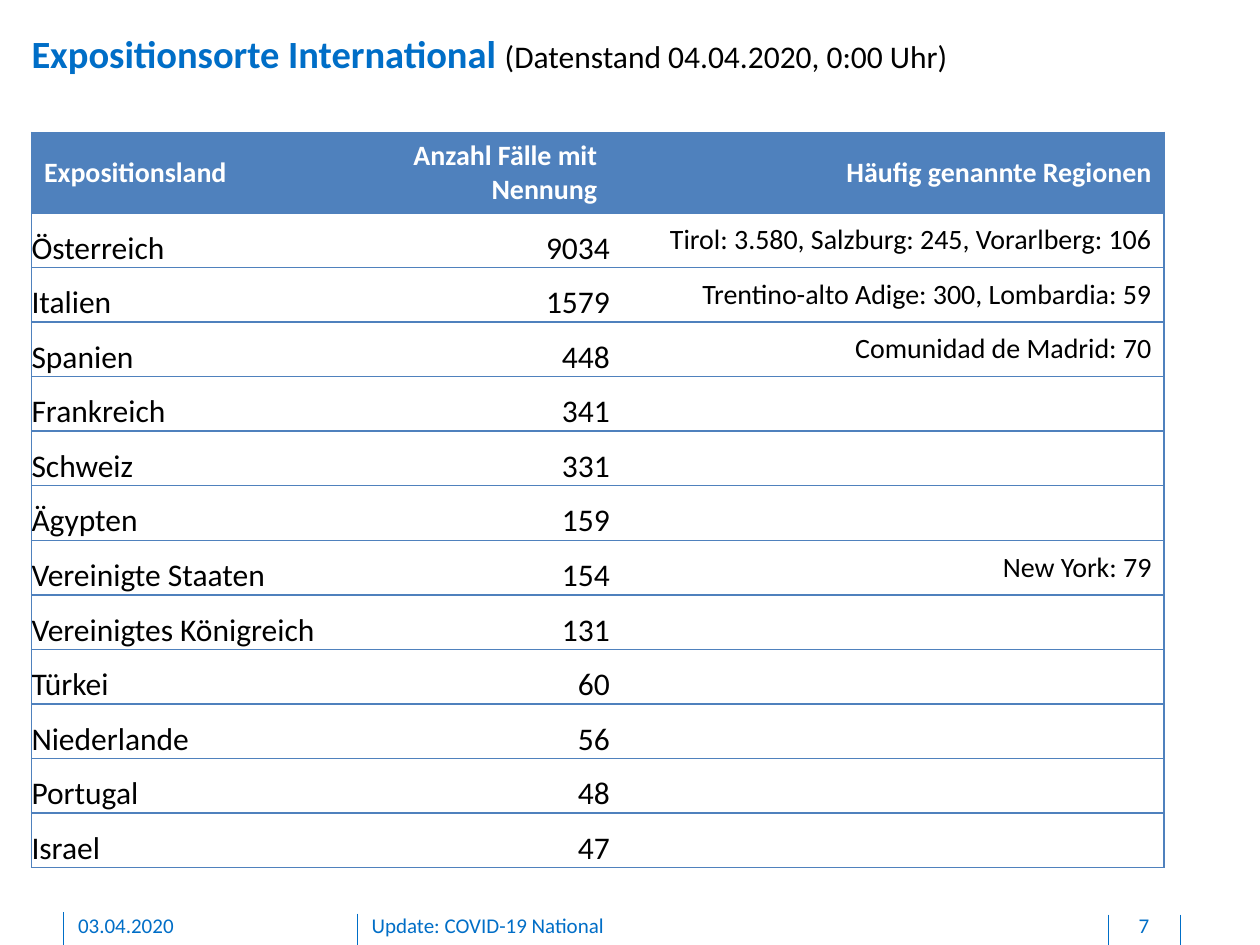
from pptx import Presentation as Deck
from pptx.dml.color import RGBColor as RGB
from pptx.enum.shapes import MSO_CONNECTOR as Link
from pptx.enum.text import MSO_ANCHOR as Anchor, PP_ALIGN as Align
from pptx.oxml import parse_xml
from pptx.oxml.ns import nsdecls
from pptx.util import Emu, Inches, Pt

COLS, ROWS = 40, 30
UNIT = Inches(0.25)
INK = {"blue": "006EC7", "head": "4F81BD", "text": "000000", "white": "FFFFFF"}
FLUSH = {"margin_left": 0, "margin_right": 0, "margin_top": 0, "margin_bottom": 0}
FOOT = {**FLUSH, "margin_bottom": Inches(0.05), "word_wrap": True,
        "vertical_anchor": Anchor.TOP}
BASE = {"vertical_anchor": Anchor.BOTTOM, **FLUSH}
MID = {"vertical_anchor": Anchor.MIDDLE}

HEADS = ["Expositionsland", "Anzahl Fälle mit Nennung", "Häufig genannte Regionen"]
LANDS = [
    ("Österreich", 9034, "Tirol: 3.580, Salzburg: 245, Vorarlberg: 106"),
    ("Italien", 1579, "Trentino-alto Adige: 300, Lombardia: 59"),
    ("Spanien", 448, "Comunidad de Madrid: 70"),
    ("Frankreich", 341, ""),
    ("Schweiz", 331, ""),
    ("Ägypten", 159, ""),
    ("Vereinigte Staaten", 154, "New York: 79"),
    ("Vereinigtes Königreich", 131, ""),
    ("Türkei", 60, ""),
    ("Niederlande", 56, ""),
    ("Portugal", 48, ""),
    ("Israel", 47, ""),
]
WIDTHS = [9.96, 8.4, 17.6]
HEAD_ROW, BODY = 2.56, 20.8
RULES = [(2, 28.96), (11.36, 29), (35.2, 29.04), (37.48, 29.04)]
NOTES = [
    ("03.04.2020", 2.48, 8.12, Align.LEFT),
    ("Update: COVID-19 National", 11.8, 22.68, Align.LEFT),
    ("7", 35.24, 2.16, Align.CENTER),
]


def grid(*cells):
    return [Emu(round(n * UNIT)) for n in cells]


def apply(item, form):
    for name, value in form.items():
        setattr(item, name, value)


def write(par, text, size, ink, bold=False, align=Align.LEFT):
    par.alignment = align
    run = par.add_run()
    run.text = text
    apply(run.font, {"name": "Calibri", "size": Pt(size), "bold": bold})
    run.font.color.rgb = RGB.from_string(INK[ink])


def add_title(slide):
    title = slide.shapes.title
    title.left, title.top, title.width, title.height = grid(1, 0.96, 35.4, 1.48)
    apply(title.text_frame, {**FLUSH, **MID, "word_wrap": True})
    par = title.text_frame.paragraphs[0]
    write(par, "Expositionsorte International ", 22, "blue", True)
    write(par, "(Datenstand 04.04.2020, 0:00 Uhr)", 18, "text")


def edge(cell, sides):
    props = cell._tc.get_or_add_tcPr()
    for side in "LRTB":
        fill = (f'<a:solidFill><a:srgbClr val="{INK["head"]}"/></a:solidFill>'
                if side in sides else "<a:noFill/>")
        props.append(parse_xml(
            f'<a:ln{side} {nsdecls("a")} w="12700">{fill}</a:ln{side}>'))


def add_cell(cell, text, col, head):
    edge(cell, ["LTB", "TB", "RTB"][col])
    cell.fill.solid()
    cell.fill.fore_color.rgb = RGB.from_string(INK["head" if head else "white"])
    apply(cell, MID if head or col == 2 else BASE)
    if text:
        write(cell.text_frame.paragraphs[0], text,
              16 if head or col == 2 else 18, "white" if head else "text",
              head, Align.RIGHT if col else Align.LEFT)


def add_table(slide):
    data = [HEADS, *LANDS]
    place = grid(1, 4.2, sum(WIDTHS), HEAD_ROW + BODY)
    table = slide.shapes.add_table(len(data), len(HEADS), *place).table
    for col, width in zip(table.columns, grid(*WIDTHS)):
        col.width = width
    highs = grid(HEAD_ROW, *[BODY / len(LANDS)] * len(LANDS))
    for row, high in zip(table.rows, highs):
        row.height = high
    for i, line in enumerate(data):
        for j, text in enumerate(line):
            add_cell(table.cell(i, j), str(text), j, i == 0)


def add_rule(slide, x, top):
    rule = slide.shapes.add_connector(Link.STRAIGHT, *grid(x, top, x, ROWS))
    rule.line.color.rgb = RGB.from_string(INK["blue"])
    rule.line.width = Pt(0.5)
    rule._element.spPr.append(parse_xml(f'<a:effectLst {nsdecls("a")}/>'))


def add_note(slide, text, x, width, align):
    box = slide.shapes.add_textbox(*grid(x, 28.96, width, 0.84))
    apply(box.text_frame, FOOT)
    write(box.text_frame.paragraphs[0], text, 12, "blue", align=align)


def main():
    deck = Deck()
    deck.slide_width, deck.slide_height = grid(COLS, ROWS)
    slide = deck.slides.add_slide(deck.slide_layouts[5])
    for rule in RULES:
        add_rule(slide, *rule)
    add_title(slide)
    for note in NOTES:
        add_note(slide, *note)
    add_table(slide)
    deck.save("out.pptx")


if __name__ == "__main__":
    main()
